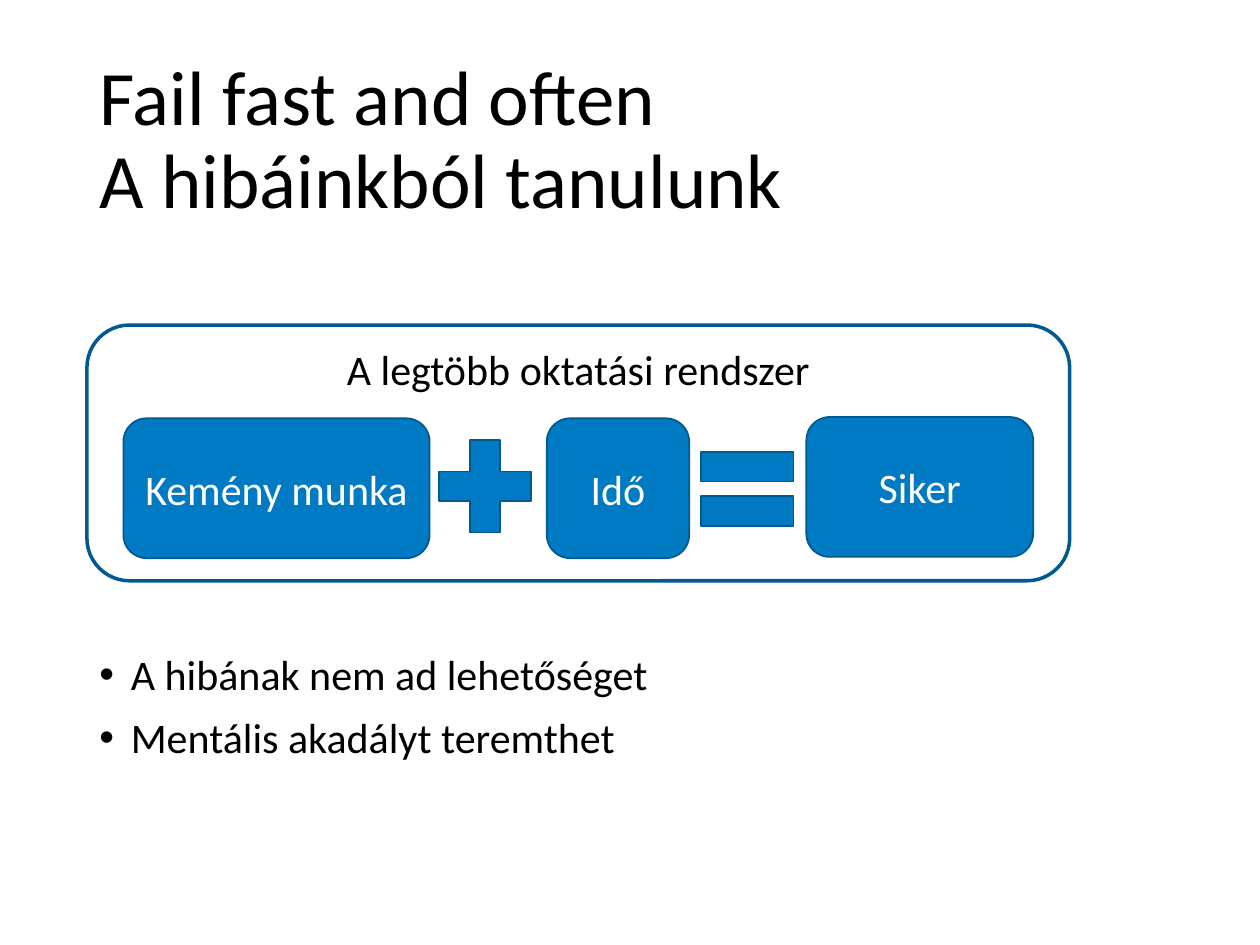
import pptx
import pptx.util
import pptx.dml.color
import pptx.enum.shapes
import pptx.enum.text
import pptx.oxml.ns
import lxml.etree

Inches = pptx.util.Inches
Pt = pptx.util.Pt
Kind = pptx.enum.shapes.MSO_SHAPE
Align = pptx.enum.text.PP_ALIGN
Anchor = pptx.enum.text.MSO_ANCHOR
Fit = pptx.enum.text.MSO_AUTO_SIZE


def color(code):
    return pptx.dml.color.RGBColor.from_string(code)


def adjust(item, values):
    for name, value in values.items():
        setattr(item, name, value)


class Deck:
    font = "Calibri"
    black = "000000"
    white = "FFFFFF"
    blue = "007AC3"
    navy = "005A90"

    def __init__(self, wide, high):
        self.show = pptx.Presentation()
        adjust(self.show, {"slide_width": Inches(wide), "slide_height": Inches(high)})
        self.slide = self.show.slides.add_slide(self.show.slide_layouts[5])

    def label(self, frame, lines, size, ink, anchor, **form):
        adjust(frame, {"word_wrap": True, "auto_size": Fit.NONE, "vertical_anchor": anchor})
        frame.text = "\n".join(lines)
        for para in frame.paragraphs:
            adjust(para, form)
            for run in para.runs:
                adjust(run.font, {"name": self.font, "size": Pt(size)})
                run.font.color.rgb = color(ink)

    def title(self, text, left, top, wide, high):
        head = self.slide.shapes.title
        adjust(head, {"left": Inches(left), "top": Inches(top),
                      "width": Inches(wide), "height": Inches(high)})
        self.label(head.text_frame, [text], 44, self.black, Anchor.MIDDLE,
                   alignment=Align.LEFT, line_spacing=0.9)

    def shape(self, kind, left, top, wide, high, text="", fill=blue,
              weight=1, ink=white, anchor=Anchor.MIDDLE):
        item = self.slide.shapes.add_shape(
            kind, Inches(left), Inches(top), Inches(wide), Inches(high))
        item.shadow.inherit = False
        if fill:
            item.fill.solid()
            item.fill.fore_color.rgb = color(fill)
        else:
            item.fill.background()
        item.line.color.rgb = color(self.navy)
        item.line.width = Pt(weight)
        if text:
            self.label(item.text_frame, [text], 24, ink, anchor, alignment=Align.CENTER)

    def bullets(self, lines, left, top, wide, high):
        box = self.slide.shapes.add_textbox(
            Inches(left), Inches(top), Inches(wide), Inches(high))
        self.label(box.text_frame, lines, 24, self.black, Anchor.TOP, line_spacing=0.9)
        for spot, para in enumerate(box.text_frame.paragraphs):
            para.space_before = Pt(10 if spot else 0)
            props = para._p.get_or_add_pPr()
            props.set("marL", str(Inches(0.25)))
            props.set("indent", str(Inches(-0.25)))
            lxml.etree.SubElement(props, pptx.oxml.ns.qn("a:buFont"), typeface="Arial")
            lxml.etree.SubElement(props, pptx.oxml.ns.qn("a:buChar"), char="•")


def main():
    deck = Deck(10, 7.5)
    deck.title("Fail fast and often\vA hibáinkból tanulunk", 0.69, 0.4, 8.62, 1.45)
    deck.bullets(["A hibának nem ad lehetőséget", "Mentális akadályt teremthet"],
                 0.69, 5.14, 8.62, 1.31)
    deck.shape(Kind.ROUNDED_RECTANGLE, 0.69, 2.58, 7.8, 2.03,
               "A legtöbb oktatási rendszer", fill=None, weight=2,
               ink=deck.black, anchor=Anchor.TOP)
    for text, left, top, wide in (("Kemény munka", 0.98, 3.32, 2.43),
                                  ("Idő", 4.34, 3.32, 1.13),
                                  ("Siker", 6.4, 3.31, 1.8)):
        deck.shape(Kind.ROUNDED_RECTANGLE, left, top, wide, 1.11, text)
    for kind, left, top in ((Kind.MATH_PLUS, 3.35, 3.36),
                            (Kind.MATH_EQUAL, 5.43, 3.38)):
        deck.shape(kind, left, top, 1, 1)
    deck.show.save("out.pptx")


if __name__ == "__main__":
    main()
